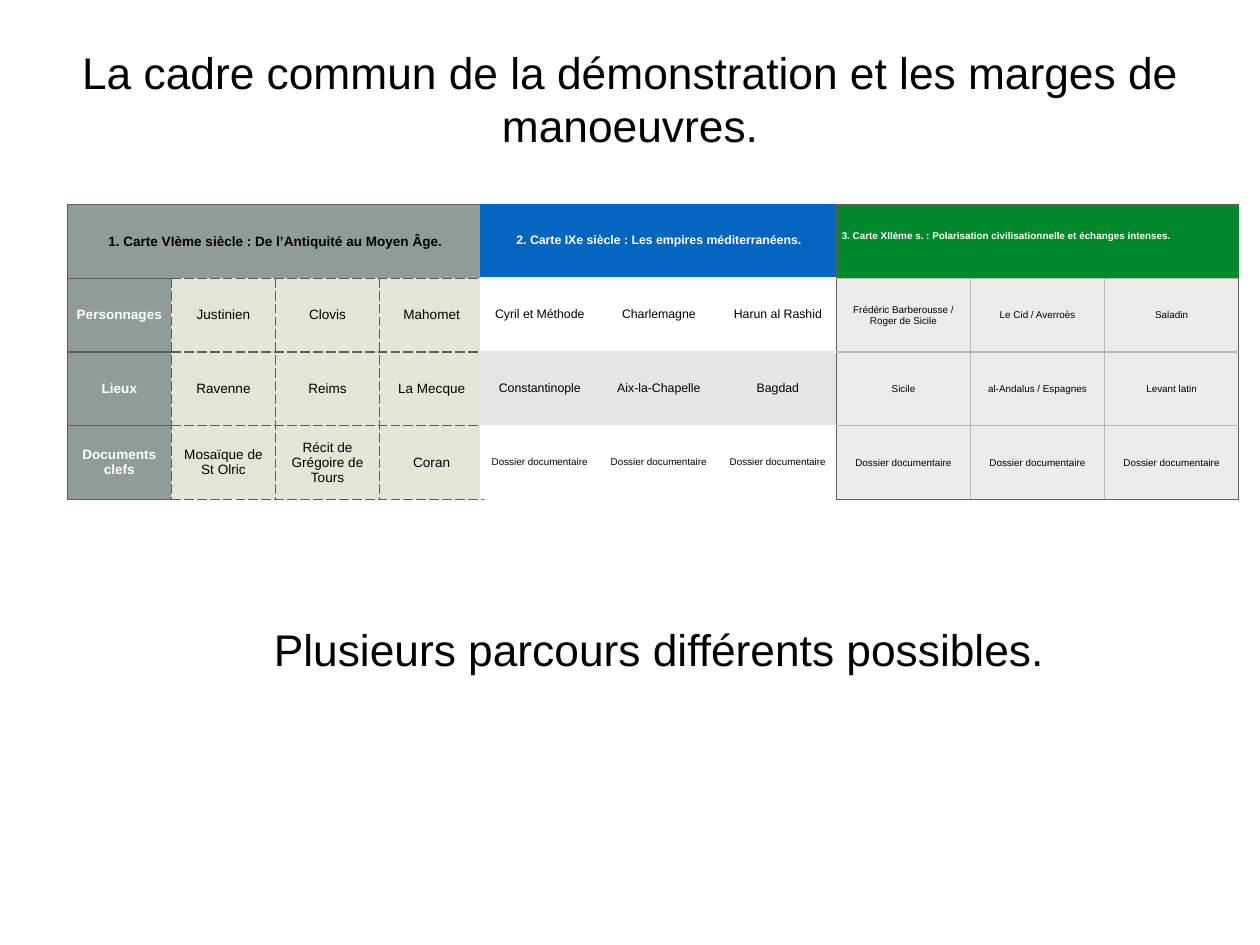
from lxml import etree
from pptx import Presentation
from pptx import util as u
from pptx.dml.color import RGBColor
from pptx.enum import text
from pptx.oxml.ns import qn

TITLE = ("La cadre commun de la démonstration et les marges de manoeuvres.", (0.7, 0.45, 12.82, 1.31))
CONCLUSION = ("Plusieurs parcours différents possibles.", (2.98, 6.97, 8.91, 0.71))
DOSSIER = ["Dossier documentaire"] * 3

SIXTH_CENTURY = dict(
    at=(0.76, 2.31, 4.7, 3.33),
    heading="1. Carte VIème siècle : De l’Antiquité au Moyen Âge.",
    rows=[
        ["Personnages", "Justinien", "Clovis", "Mahomet"],
        ["Lieux", "Ravenne", "Reims", "La Mecque"],
        ["Documents clefs", "Mosaïque de St Olric", "Récit de Grégoire de Tours", "Coran"],
    ],
    look="sixth",
)
NINTH_CENTURY = dict(
    at=(5.42, 2.3, 4.03, 3.33),
    heading="2. Carte IXe siècle : Les empires méditerranéens.",
    rows=[
        ["Cyril et Méthode", "Charlemagne", "Harun al Rashid"],
        ["Constantinople", "Aix-la-Chapelle", "Bagdad"],
        DOSSIER,
    ],
    look="ninth",
)
TWELFTH_CENTURY = dict(
    at=(9.44, 2.31, 4.54, 3.33),
    heading="3. Carte XIIème s. : Polarisation civilisationnelle et échanges intenses.",
    rows=[
        ["Frédéric Barberousse / Roger de Sicile", "Le Cid / Averroès", "Saladin"],
        ["Sicile", "al-Andalus / Espagnes", "Levant latin"],
        DOSSIER,
    ],
    look="twelfth",
)

THEME = dict(
    font="Arial", ink="000000", light="FFFFFF", display=36, inset=0.06, line=1,
    no_grid="{2D5ABB26-0587-4C30-8999-92F81FD0307C}",
    sixth=dict(head="909C99", head_ink="000000", label="909C99", bands=["E6E3D7"] * 3,
               sizes=[11] * 4, outer="5D5D5D", inner="5D5D5D", dash="lgDash"),
    ninth=dict(head="0365C0", head_ink="FFFFFF", label=None, bands=["FFFFFF", "E3E5E8", "FFFFFF"],
               sizes=[10, 10, 10, 8], outer=None, inner=None, dash=None),
    twelfth=dict(head="00882B", head_ink="FFFFFF", label=None, bands=["EBEBEB"] * 3,
                 sizes=[8] * 4, outer="606060", inner="B8B8B8", dash="solid"),
)


def write(frame, words, size, color, bold=False, align=text.PP_ALIGN.CENTER):
    frame.text = words
    paragraph = frame.paragraphs[0]
    paragraph.alignment = align
    font = paragraph.runs[0].font
    font.name, font.size, font.bold = THEME["font"], u.Pt(size), bold
    font.color.rgb = RGBColor.from_string(color)


def set_insets(holder):
    for side in ("left", "top", "right", "bottom"):
        setattr(holder, "margin_" + side, u.Inches(THEME["inset"]))


def add_statement(slide, words, at):
    box = slide.shapes.add_textbox(*map(u.Inches, at))
    frame = box.text_frame
    frame.word_wrap = True
    frame.vertical_anchor = text.MSO_ANCHOR.MIDDLE
    set_insets(frame)
    write(frame, words, THEME["display"], THEME["ink"])


def draw_borders(cell, edges):
    properties = cell._tc.get_or_add_tcPr()
    for place, (side, color, dash) in enumerate(edges):
        line = etree.Element(qn("a:ln" + side), w=str(u.Pt(THEME["line"])))
        fill = etree.SubElement(line, qn("a:solidFill"))
        etree.SubElement(fill, qn("a:srgbClr"), val=color)
        etree.SubElement(line, qn("a:prstDash"), val=dash)
        properties.insert(place, line)


def cell_edges(look, row, column, last_row, last_column):
    if not look["outer"]:
        return []
    is_head = row == 0
    is_label = bool(look["label"]) and column == 0
    dash = "solid" if is_head or is_label else look["dash"]
    on_rim = dict(L=column == 0, R=column == last_column, T=is_head, B=row == last_row)
    skipped = set()
    if is_head:
        skipped = {"B"} | {side for side in "LR" if not on_rim[side]}
    elif is_label:
        skipped = {"R"}
    return [(side, look["outer" if rim else "inner"], dash)
            for side, rim in on_rim.items() if side not in skipped]


def add_century(slide, at, heading, rows, look):
    look = THEME[look]
    grid = [[heading] + [""] * (len(rows[0]) - 1)] + rows
    last_row, last_column = len(grid) - 1, len(grid[0]) - 1
    table = slide.shapes.add_table(len(grid), len(grid[0]), *map(u.Inches, at)).table
    table._tbl.tblPr.find(qn("a:tableStyleId")).text = THEME["no_grid"]
    table.first_row = table.horz_banding = False
    for column in table.columns:
        column.width = u.Inches(at[2] / len(grid[0]))
    for row in table.rows:
        row.height = u.Inches(at[3] / len(grid))
    table.cell(0, 0).merge(table.cell(0, last_column))
    for r, words_row in enumerate(grid):
        for c, words in enumerate(words_row):
            cell = table.cell(r, c)
            is_label = r > 0 and c == 0 and bool(look["label"])
            shade = look["head"] if r == 0 else look["label"] if is_label else look["bands"][r - 1]
            color = look["head_ink"] if r == 0 else THEME["light" if is_label else "ink"]
            cell.fill.solid()
            cell.fill.fore_color.rgb = RGBColor.from_string(shade)
            cell.vertical_anchor = text.MSO_ANCHOR.MIDDLE
            set_insets(cell)
            if words:
                write(cell.text_frame, words, look["sizes"][r], color, r == 0 or is_label)
            draw_borders(cell, cell_edges(look, r, c, last_row, last_column))
    return table


def main():
    deck = Presentation()
    deck.slide_width, deck.slide_height = u.Inches(14.22), u.Inches(10.67)
    slide = deck.slides.add_slide(deck.slide_layouts[6])
    add_century(slide, **SIXTH_CENTURY)
    add_century(slide, **NINTH_CENTURY)
    add_statement(slide, *TITLE)
    add_statement(slide, *CONCLUSION)
    heading = add_century(slide, **TWELFTH_CENTURY).cell(0, 0)
    heading.text_frame.paragraphs[0].alignment = text.PP_ALIGN.LEFT
    heading.margin_bottom = u.Inches(0.18)
    deck.save("out.pptx")


if __name__ == "__main__":
    main()
